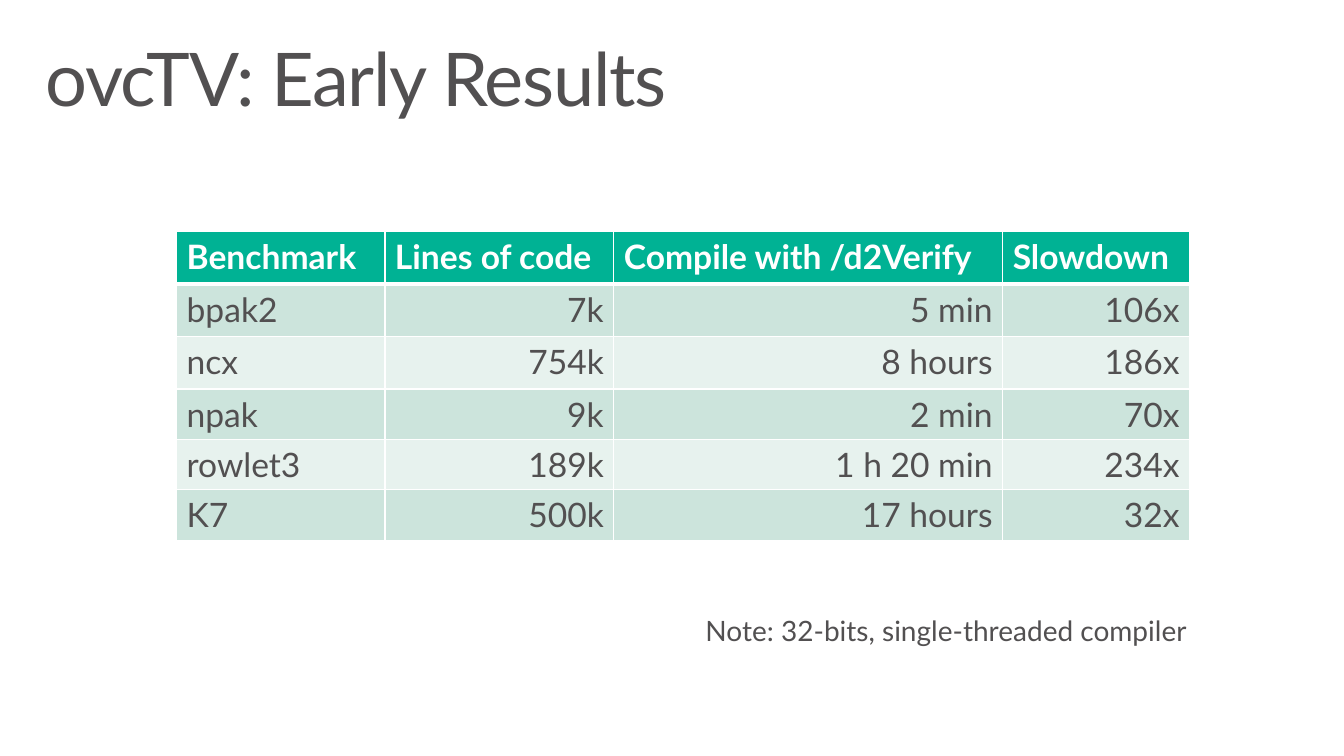
import pptx
import pptx.util
import pptx.dml.color
import pptx.enum.text
import lxml.etree
from dataclasses import dataclass
from pptx.util import Cm


@dataclass(frozen=True)
class Theme:
    font: str = "Lato"
    text: str = "525051"
    white: str = "FFFFFF"
    header: str = "00B294"
    bands: tuple = ("CCE4DC", "E7F2EE")
    title_size: float = 52.9
    table_size: float = 24
    note_size: float = 20
    rule: float = 1
    header_rule: float = 3


THEME = Theme()

COLUMN_WIDTHS = (5.25, 5.77, 9.8, 4.71)
ROW_HEIGHTS = (1.32, 1.32, 1.32, 1.27, 1.27, 1.27)
RESULTS = (
    ("Benchmark", "Lines of code", "Compile with /d2Verify", "Slowdown"),
    ("bpak2", "7k", "5 min", "106x"),
    ("ncx", "754k", "8 hours", "186x"),
    ("npak", "9k", "2 min", "70x"),
    ("rowlet3", "189k", "1 h 20 min", "234x"),
    ("K7", "500k", "17 hours", "32x"),
)


def rgb(color):
    return pptx.dml.color.RGBColor.from_string(color)


def style_run(r, size, color, bold=False):
    r.font.name = THEME.font
    r.font.size = pptx.util.Pt(size)
    r.font.bold = bold
    r.font.color.rgb = rgb(color)


def add_text(s, text, left, top, width, height, size):
    tf = s.shapes.add_textbox(Cm(left), Cm(top), Cm(width), Cm(height)).text_frame
    tf.word_wrap = True
    tf.text = text
    style_run(tf.paragraphs[0].runs[0], size, THEME.text)
    return tf


def add_title(s, text):
    tf = add_text(s, text, 0.74, 0.83, 32.39, 2.49, THEME.title_size)
    tf.margin_left = tf.margin_right = Cm(0.41)
    tf.margin_top = tf.margin_bottom = Cm(0.25)
    p = tf.paragraphs[0]
    p.line_spacing = 0.9
    p.runs[0].font._element.set("spc", "-100")


def set_borders(cell, widths):
    """Draw white rules; widths in points for left, right, top, bottom."""
    tc_pr = cell._tc.get_or_add_tcPr()
    ns = "{http://schemas.openxmlformats.org/drawingml/2006/main}"
    for side, width in zip("LRTB", widths):
        ln = lxml.etree.SubElement(tc_pr, f"{ns}ln{side}", w=str(pptx.util.Pt(width)))
        fill = lxml.etree.SubElement(ln, f"{ns}solidFill")
        lxml.etree.SubElement(fill, f"{ns}srgbClr", val=THEME.white)


def fill_cell(cell, text, row, col):
    is_header = row == 0
    # Rules come before the fill in the cell properties
    top = THEME.header_rule if row == 1 else THEME.rule
    bottom = THEME.header_rule if is_header else THEME.rule
    set_borders(cell, (THEME.rule, THEME.rule, top, bottom))
    cell.fill.solid()
    cell.fill.fore_color.rgb = rgb(THEME.header if is_header else THEME.bands[(row - 1) % 2])
    cell.text_frame.text = text
    p = cell.text_frame.paragraphs[0]
    if col and not is_header:
        p.alignment = pptx.enum.text.PP_ALIGN.RIGHT
    style_run(p.runs[0], THEME.table_size, THEME.white if is_header else THEME.text, is_header)


def add_results_table(s, left, top):
    table = s.shapes.add_table(
        len(RESULTS), len(COLUMN_WIDTHS), Cm(left), Cm(top),
        Cm(sum(COLUMN_WIDTHS)), Cm(sum(ROW_HEIGHTS)),
    ).table
    for column, width in zip(table.columns, COLUMN_WIDTHS):
        column.width = Cm(width)
    for row, (values, height) in enumerate(zip(RESULTS, ROW_HEIGHTS)):
        table.rows[row].height = Cm(height)
        for col, text in enumerate(values):
            fill_cell(table.cell(row, col), text, row, col)


def main():
    prs = pptx.Presentation()
    prs.slide_width, prs.slide_height = Cm(33.87), Cm(19.05)
    s = prs.slides.add_slide(prs.slide_layouts[6])

    # Heading
    add_title(s, "ovcTV: Early Results")
    # Benchmark results
    add_results_table(s, 4.45, 5.84)
    # Note under the table
    add_text(s, "Note: 32-bits, single-threaded compiler", 17.53, 15.34, 13.21, 1.12,
             THEME.note_size)

    prs.save("out.pptx")


if __name__ == "__main__":
    main()
